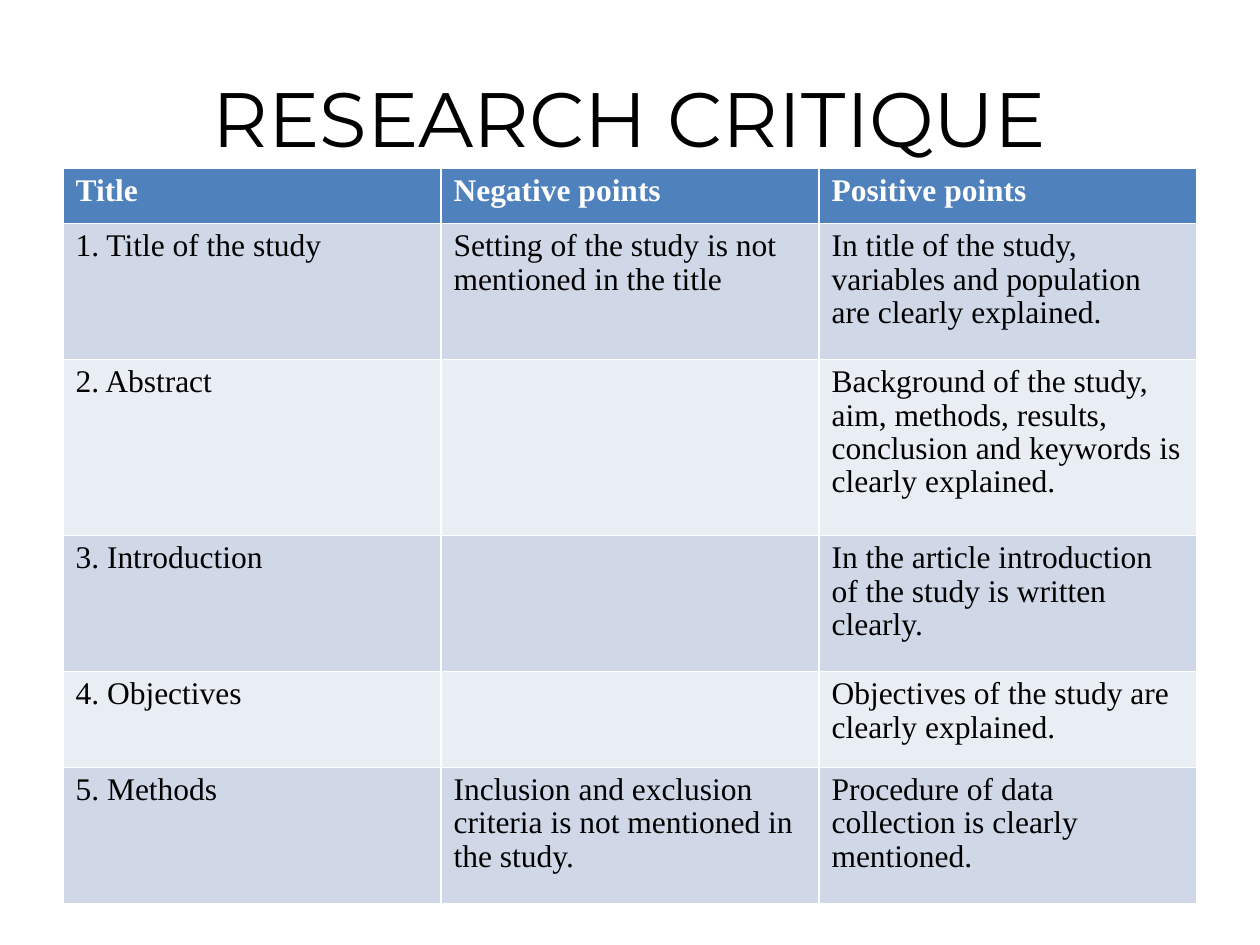
from pptx import Presentation
from pptx.dml.color import RGBColor
from pptx.enum.text import MSO_ANCHOR, PP_ALIGN
from pptx.util import Pt

MIDDLE = MSO_ANCHOR.MIDDLE
CENTER = PP_ALIGN.CENTER

TITLE = "RESEARCH CRITIQUE"
HEADERS = ("Title", "Negative points", "Positive points")
CRITIQUE = [
    ("1. Title of the study",
     "Setting of the study is not mentioned in the title",
     "In title of the study, variables and population are clearly explained."),
    ("2. Abstract", "",
     "Background of the study, aim, methods, results, conclusion and keywords is clearly explained."),
    ("3. Introduction", "",
     "In the article introduction of the study is written clearly."),
    ("4. Objectives", "",
     "Objectives of the study are clearly explained."),
    ("5. Methods",
     "Inclusion and exclusion criteria is not mentioned in the study.",
     "Procedure of data collection is clearly mentioned."),
]
LINES_PER_ROW = (1, 3, 4, 3, 2, 3)

THEME = {
    "title_font": "Montserrat", "title_size": 44,
    "body_font": "Times New Roman", "body_size": 18,
    "text": RGBColor.from_string("000000"),
    "header_text": RGBColor.from_string("FFFFFF"),
    "header_fill": RGBColor.from_string("4F81BD"),
    "bands": [RGBColor.from_string("D0D8E8"), RGBColor.from_string("E9EDF4")],
}

PAGE_WIDTH, PAGE_HEIGHT = 720, 540
MARGIN = 36
CONTENT_WIDTH = PAGE_WIDTH - 2 * MARGIN
TITLE_TOP, TITLE_HEIGHT = 21.6, 90
TABLE_TOP = 96
LINE_HEIGHT, ROW_PADDING = 23, 8.7
LINE_SPACING = 0.96


def style_font(font, name, size, color, bold=False):
    font.name = name
    font.size = Pt(size)
    font.color.rgb = color
    font.bold = bold


def add_title(page):
    box = page.shapes.add_textbox(Pt(MARGIN), Pt(TITLE_TOP),
                                  Pt(CONTENT_WIDTH), Pt(TITLE_HEIGHT))
    frame = box.text_frame
    frame.word_wrap = True
    frame.vertical_anchor = MIDDLE
    para = frame.paragraphs[0]
    para.text = TITLE
    para.alignment = CENTER
    style_font(para.font, THEME["title_font"], THEME["title_size"], THEME["text"])


def fill_cell(cell, text, fill, color, bold):
    cell.fill.solid()
    cell.fill.fore_color.rgb = fill
    para = cell.text_frame.paragraphs[0]
    para.text = text
    para.line_spacing = LINE_SPACING
    style_font(para.font, THEME["body_font"], THEME["body_size"], color, bold)


def add_critique_table(page):
    rows = [HEADERS, *CRITIQUE]
    heights = [LINE_HEIGHT * lines + ROW_PADDING for lines in LINES_PER_ROW]
    table = page.shapes.add_table(len(rows), len(HEADERS), Pt(MARGIN), Pt(TABLE_TOP),
                                  Pt(CONTENT_WIDTH), Pt(sum(heights))).table
    for row_index, (texts, height) in enumerate(zip(rows, heights)):
        table.rows[row_index].height = Pt(height)
        header = row_index == 0
        fill = THEME["header_fill"] if header else THEME["bands"][(row_index - 1) % 2]
        color = THEME["header_text"] if header else THEME["text"]
        for column_index, text in enumerate(texts):
            fill_cell(table.cell(row_index, column_index), text, fill, color, header)


def main():
    deck = Presentation()
    deck.slide_width, deck.slide_height = Pt(PAGE_WIDTH), Pt(PAGE_HEIGHT)
    page = deck.slides.add_slide(deck.slide_layouts[6])
    add_title(page)
    add_critique_table(page)
    deck.save("out.pptx")


if __name__ == "__main__":
    main()
